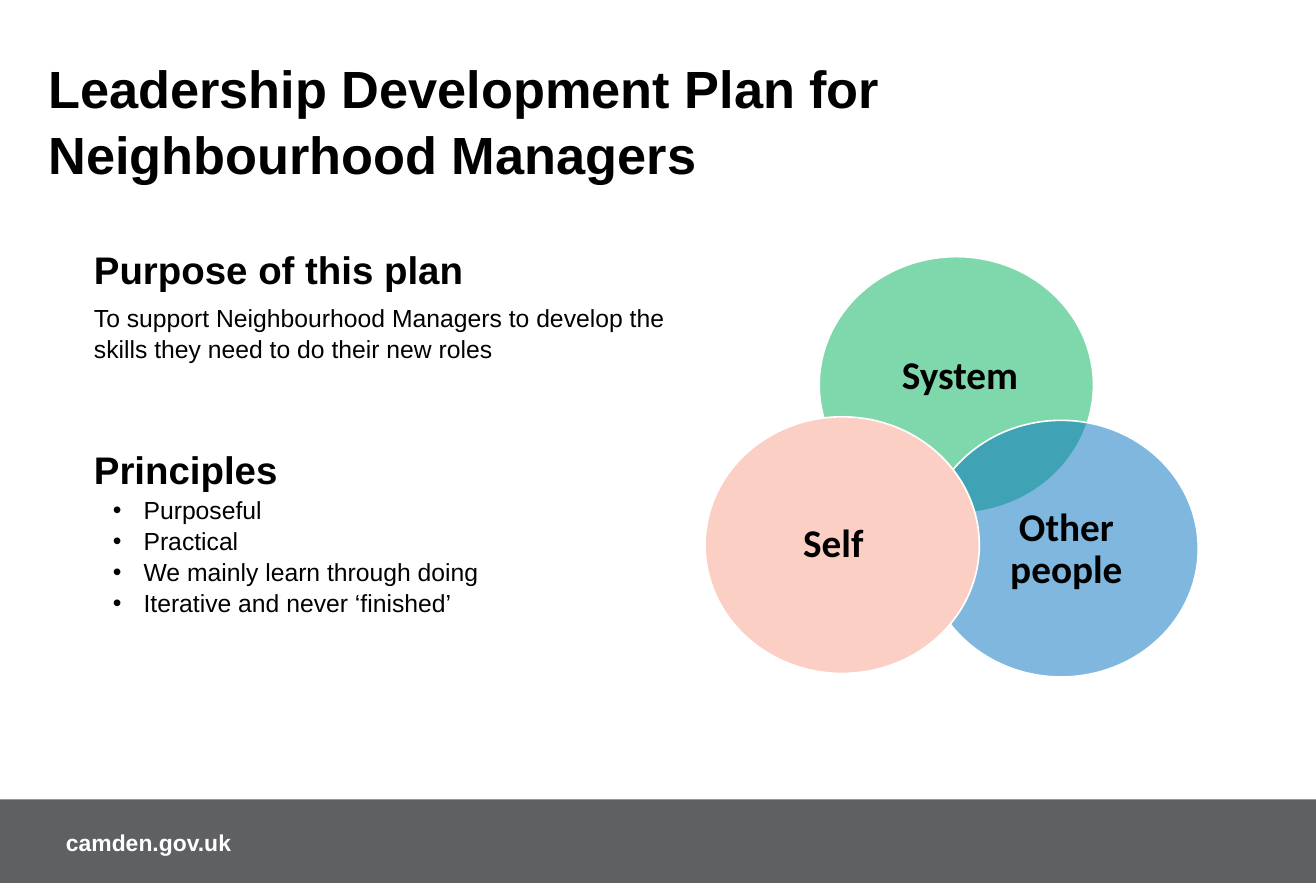
from lxml import etree
from pptx import Presentation
from pptx.dml.color import RGBColor
from pptx.enum.shapes import MSO_SHAPE
from pptx.enum.text import MSO_ANCHOR, MSO_AUTO_SIZE, PP_ALIGN
from pptx.oxml.ns import qn
from pptx.util import Inches, Pt

# Content
TITLE = "Leadership Development Plan for Neighbourhood Managers"
PRINCIPLES = ["Purposeful", "Practical", "We mainly learn through doing",
              "Iterative and never ‘finished’"]
TEXTS = [  # text, box, style
    ("Principles", (0.7, 3.72, 8.13, 0.5), "heading"),
    ("Purpose of this plan", (0.7, 2.02, 8.13, 0.5), "heading"),
    ("To support Neighbourhood Managers to develop the skills they need "
     "to do their new roles", (0.7, 2.51, 5.3, 0.61), "body"),
]
CIRCLES = [  # label, circle corner, label box, colour, opacity in percent
    ("System", (6.96, 2.18), (7.3, 2.71, 1.71, 0.98), "green", 50),
    ("Other people", (7.85, 3.57), (8.36, 4.07, 1.4, 1.2), "blue", 50),
    ("Self", (5.99, 3.54), (6.38, 4.03, 1.4, 1.2), "pink", 100),
]
CIRCLE_SIZE = (2.33, 2.18)
FOOTER = "camden.gov.uk"

COLORS = {"black": "000000", "white": "FFFFFF", "grey": "5F6062",
          "green": "00B259", "blue": "0070C0", "pink": "FBCFC4"}
STYLES = {
    "title": {"name": "Arial", "size": Pt(32), "bold": True},
    "heading": {"name": "Arial", "size": Pt(23.5), "bold": True},
    "body": {"name": "Arial", "size": Pt(15.1), "bold": False},
    "footer": {"name": "Arial", "size": Pt(14), "bold": True},
    "label": {"name": "Calibri", "size": Pt(24), "bold": True},
}
NO_MARGINS = dict.fromkeys(
    ("margin_left", "margin_top", "margin_right", "margin_bottom"), 0)


def rgb(color):
    return RGBColor.from_string(COLORS[color])


def place(sp, box):
    sp.left, sp.top, sp.width, sp.height = map(Inches, box)


def write(sp, lines, style, color="black", spacing=1.05, align=PP_ALIGN.LEFT,
          anchor=MSO_ANCHOR.TOP, margins=None, bullet=False):
    tf = sp.text_frame
    frame = {"word_wrap": True, "auto_size": MSO_AUTO_SIZE.NONE,
             "vertical_anchor": anchor, **(margins or {})}
    for key, value in frame.items():
        setattr(tf, key, value)
    tf.text = "\n".join(lines)
    para = {"alignment": align, "line_spacing": spacing,
            "space_before": Pt(0), "space_after": Pt(0)}
    for p in tf.paragraphs:
        for key, value in para.items():
            setattr(p, key, value)
        if bullet:
            pPr = p._p.get_or_add_pPr()
            pPr.set("marL", str(Inches(0.26)))
            pPr.set("indent", str(-Inches(0.26)))
            etree.SubElement(pPr, qn("a:buFont"), typeface="Arial")
            etree.SubElement(pPr, qn("a:buChar"), char="•")
        for r in p.runs:
            for key, value in STYLES[style].items():
                setattr(r.font, key, value)
            r.font.color.rgb = rgb(color)


def add_filled(s, kind, box, color, opacity=100):
    sp = s.shapes.add_shape(kind, *map(Inches, box))
    sp.shadow.inherit = False
    sp.fill.solid()
    sp.fill.fore_color.rgb = rgb(color)
    if opacity < 100:
        fill = sp._element.spPr.find(qn("a:solidFill"))
        etree.SubElement(fill[0], qn("a:alpha"), val=str(opacity * 1000))
    sp.line.fill.background()
    return sp


def main():
    prs = Presentation()
    prs.slide_width, prs.slide_height = Inches(11.18), Inches(7.5)
    s = prs.slides.add_slide(prs.slide_layouts[1])

    # Title and list of principles
    title, body = s.placeholders
    place(title, (0.41, 0.45, 8.13, 1.22))
    write(title, [TITLE], "title", margins=NO_MARGINS)
    place(body, (0.86, 4.14, 5.59, 1.12))
    write(body, PRINCIPLES, "body", bullet=True)

    # Footer band
    add_filled(s, MSO_SHAPE.RECTANGLE, (0, 6.79, 11.18, 0.71), "grey")
    tb = s.shapes.add_textbox(*map(Inches, (0.56, 7.04, 4.61, 0.24)))
    write(tb, [FOOTER], "footer", "white", 1.0, margins=NO_MARGINS)

    # Headings and purpose
    for text, box, style in TEXTS:
        tb = s.shapes.add_textbox(*map(Inches, box))
        write(tb, [text], style)

    # Overlapping circles
    for label, corner, box, color, opacity in CIRCLES:
        sp = add_filled(s, MSO_SHAPE.OVAL, corner + CIRCLE_SIZE, color, opacity)
        sp.line.color.rgb = rgb("white")
        sp.line.width = Pt(1)
        tb = s.shapes.add_textbox(*map(Inches, box))
        write(tb, [label], "label", spacing=0.9, align=PP_ALIGN.CENTER,
              anchor=MSO_ANCHOR.MIDDLE, margins=NO_MARGINS)

    prs.save("out.pptx")


if __name__ == "__main__":
    main()
